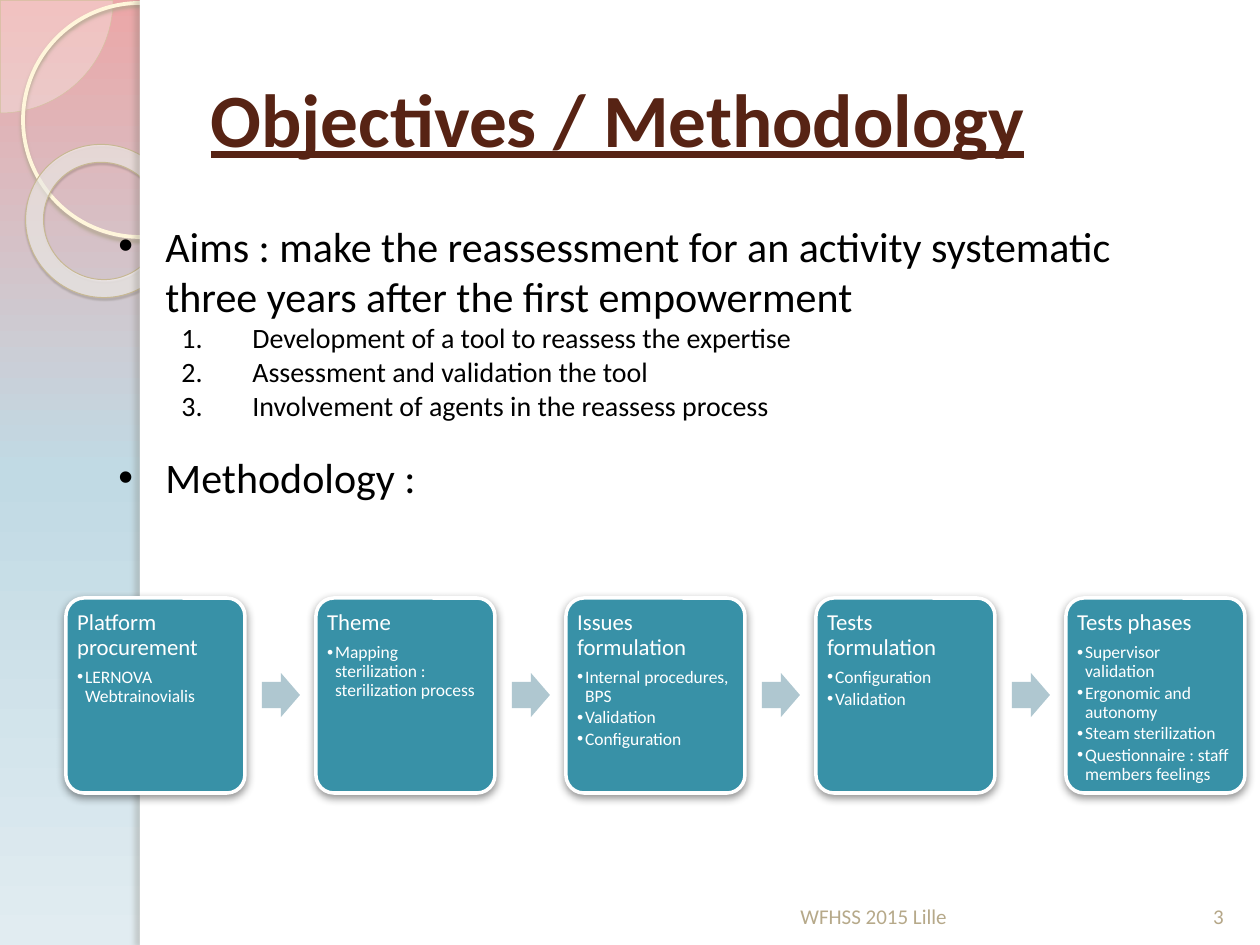
from lxml import etree
from pptx import Presentation
from pptx.dml.color import RGBColor
from pptx.enum.shapes import MSO_SHAPE
from pptx.enum.text import MSO_ANCHOR, PP_ALIGN
from pptx.oxml.ns import qn
from pptx.util import Emu, Pt

PIE, OVAL, DONUT = MSO_SHAPE.PIE, MSO_SHAPE.OVAL, MSO_SHAPE.DONUT
RECTANGLE, ROUNDED = MSO_SHAPE.RECTANGLE, MSO_SHAPE.ROUNDED_RECTANGLE
ARROW = MSO_SHAPE.RIGHT_ARROW
TOP, MIDDLE, BOTTOM = MSO_ANCHOR.TOP, MSO_ANCHOR.MIDDLE, MSO_ANCHOR.BOTTOM
LEFT, CENTER = PP_ALIGN.LEFT, PP_ALIGN.CENTER
FONT = "Calibri"
WIDTH, HEIGHT = 1260, 945
BACKGROUND = [(0, "EBA7A8"), (50, "C1DAE4"), (100, "E1ECF1")]
AIMS = [
    "Development of a tool to reassess the expertise",
    "Assessment and validation the tool",
    "Involvement of agents in the reassess process",
]
STEPS = [
    ("Platform procurement", ["LERNOVA Webtrainovialis"]),
    ("Theme", ["Mapping sterilization : sterilization process"]),
    ("Issues formulation", ["Internal procedures, BPS", "Validation", "Configuration"]),
    ("Tests formulation", ["Configuration", "Validation"]),
    ("Tests phases", ["Supervisor validation", "Ergonomic and autonomy",
                      "Steam sterilization", "Questionnaire : staff members feelings"]),
]


def px(value):
    """Turn slide pixels into EMU."""
    return Emu(round(value * 914400 / 126))


def color(value):
    """Turn a hex string into a colour."""
    return RGBColor.from_string(value)


def add_child(parent, tag, **attributes):
    """Append an XML child with the given attributes."""
    child = etree.SubElement(parent, qn(tag))
    for name, value in attributes.items():
        child.set(name, str(value))
    return child


def add_shadow(shape, hex_color, alpha, blur, distance, angle):
    """Give a shape an outer shadow."""
    effects = shape.element.spPr.find(qn("a:effectLst"))
    shadow = add_child(effects, "a:outerShdw", blurRad=Pt(blur), dist=Pt(distance),
                       dir=angle * 60000, algn="tl", rotWithShape=0)
    shade = add_child(shadow, "a:srgbClr", val=hex_color)
    add_child(shade, "a:alpha", val=alpha * 1000)


def add_shape(slide, kind, box, fill=None, alpha=100, line=None, line_width=1,
              adjustments=(), shadow=None):
    """Add a preset shape with its fill, outline and shadow."""
    shape = slide.shapes.add_shape(kind, *map(px, box))
    shape.shadow.inherit = False
    for index, value in enumerate(adjustments):
        shape.adjustments[index] = value
    if fill:
        shape.fill.solid()
        shape.fill.fore_color.rgb = color(fill)
        if alpha < 100:
            shade = shape.element.spPr.find(qn("a:solidFill"))[0]
            add_child(shade, "a:alpha", val=alpha * 1000)
    else:
        shape.fill.background()
    if line:
        shape.line.color.rgb = color(line)
        shape.line.width = Pt(line_width)
    else:
        shape.line.fill.background()
    if shadow:
        add_shadow(shape, *shadow)
    return shape


def write_paragraph(frame, text, size, hex_color, first=False, align=LEFT,
                    bullet=None, margin=0, hanging=0):
    """Write one paragraph, with a bullet character or a number if asked."""
    paragraph = frame.paragraphs[0] if first else frame.add_paragraph()
    paragraph.text = text
    paragraph.alignment = align
    if bullet:
        properties = paragraph._p.get_or_add_pPr()
        properties.set("marL", str(px(margin)))
        properties.set("indent", str(-px(hanging)))
        if bullet == "number":
            add_child(properties, "a:buAutoNum", type="arabicPeriod")
        else:
            add_child(properties, "a:buFont", typeface="Arial")
            add_child(properties, "a:buChar", char=bullet)
    paragraph.font.name = FONT
    paragraph.font.size = Pt(size)
    paragraph.font.color.rgb = color(hex_color)
    return paragraph


def add_text_frame(slide, box, anchor=TOP):
    """Add a wrapping text box and return its frame."""
    frame = slide.shapes.add_textbox(*map(px, box)).text_frame
    frame.word_wrap = True
    frame.vertical_anchor = anchor
    return frame


def add_background(slide):
    """Fill the slide with a vertical three-colour gradient."""
    fill = slide.background.fill
    fill.gradient()
    fill.gradient_angle = 270
    stops = slide.element.find(".//" + qn("a:gsLst"))
    for stop in list(stops):
        stops.remove(stop)
    for position, hex_color in BACKGROUND:
        stop = add_child(stops, "a:gs", pos=position * 1000)
        add_child(stop, "a:srgbClr", val=hex_color)


def add_side_band(slide, width):
    """Draw the circles of the side band and the white page beside it."""
    add_shape(slide, PIE, (-112, -112, 225, 225), "FEFAF4", 33, "D3C39F", 0.25, (0, 54))
    add_shape(slide, OVAL, (23, 3, 234, 234), line="FFF6DB", line_width=2.15,
              shadow=("AFA58D", 85, 2, 2, 90))
    ring = add_shape(slide, DONUT, (25, 145, 155, 152), "FFFEFB", 58, "C7B893", 0.58,
                     (0.118,), ("5A5444", 35, 1, 1.2, 75))
    ring.rotation = 38.6
    add_shape(slide, RECTANGLE, (width, 0, WIDTH - width, HEIGHT), "FFFFFF")
    add_shape(slide, RECTANGLE, (width, 0, 10, HEIGHT), "FFFFFF",
              shadow=("706B5F", 25, 3, 3, 180))


def place_title(slide, box, text):
    """Format the title placeholder and bring it in front of the page."""
    title = slide.shapes.title
    title.left, title.top, title.width, title.height = map(px, box)
    frame = title.text_frame
    frame.vertical_anchor = MIDDLE
    paragraph = write_paragraph(frame, text, 43, "572314", first=True)
    paragraph.font.bold = True
    paragraph.font.underline = True
    slide.shapes.element.append(title.element)


def add_body(slide, box):
    """Write the aims with their numbered list and the methodology heading."""
    frame = add_text_frame(slide, box)
    heading = {"size": 24, "hex_color": "000000", "bullet": "•", "margin": 47, "hanging": 47}
    write_paragraph(frame, "Aims : make the reassessment for an activity systematic "
                    "three years after the first empowerment", first=True, **heading)
    for aim in AIMS:
        write_paragraph(frame, aim, 16, "000000", bullet="number", margin=134, hanging=71)
    write_paragraph(frame, "Methodology :", **heading).space_before = Pt(17)


def add_card(slide, box, heading, items):
    """Draw one process step with its heading and bullets."""
    card = add_shape(slide, ROUNDED, box, "3891A7", line="FFFFFF", line_width=2,
                     adjustments=(0.1,), shadow=("000000", 43, 5, 2, 90))
    frame = card.text_frame
    frame.word_wrap = True
    frame.vertical_anchor = TOP
    frame.margin_left = frame.margin_bottom = px(6)
    frame.margin_top = frame.margin_right = px(8)
    paragraph = write_paragraph(frame, heading, 13, "FFFFFF", first=True)
    paragraph.line_spacing = 0.9
    paragraph.space_after = Pt(4.5)
    for item in items:
        paragraph = write_paragraph(frame, item, 10, "FFFFFF", bullet="•", margin=8, hanging=8)
        paragraph.line_spacing = 0.9
        paragraph.space_after = Pt(1.5)


def add_process(slide, left, top, width, height, pitch):
    """Lay out the steps in a row with an arrow between neighbours."""
    for index, (heading, items) in enumerate(STEPS):
        x = left + index * pitch
        if index:
            add_shape(slide, ARROW, (x - 54, top + (height - 44) // 2, 38, 44), "AFC7D0",
                      adjustments=(0.6, 0.5))
        add_card(slide, (x, top, width, height), heading, items)


def add_footer(slide, top, height):
    """Write the event name and the slide number."""
    event = add_text_frame(slide, (788, top, 399, height), BOTTOM)
    write_paragraph(event, "WFHSS 2015 Lille", 12, "B6A98A", first=True)
    number = add_text_frame(slide, (1187, top, 63, height), BOTTOM)
    write_paragraph(number, "3", 12, "B5A788", first=True, align=CENTER)


def main():
    """Build the slide and save it."""
    presentation = Presentation()
    presentation.slide_width, presentation.slide_height = px(WIDTH), px(HEIGHT)
    slide = presentation.slides.add_slide(presentation.slide_layouts[5])
    add_background(slide)
    add_side_band(slide, 140)
    place_title(slide, (198, 38, 1033, 158), "Objectives / Methodology")
    add_process(slide, 66, 598, 179, 195, 250)
    add_body(slide, (106, 214, 1062, 377))
    add_footer(slide, 869, 66)
    presentation.save("out.pptx")


if __name__ == "__main__":
    main()
